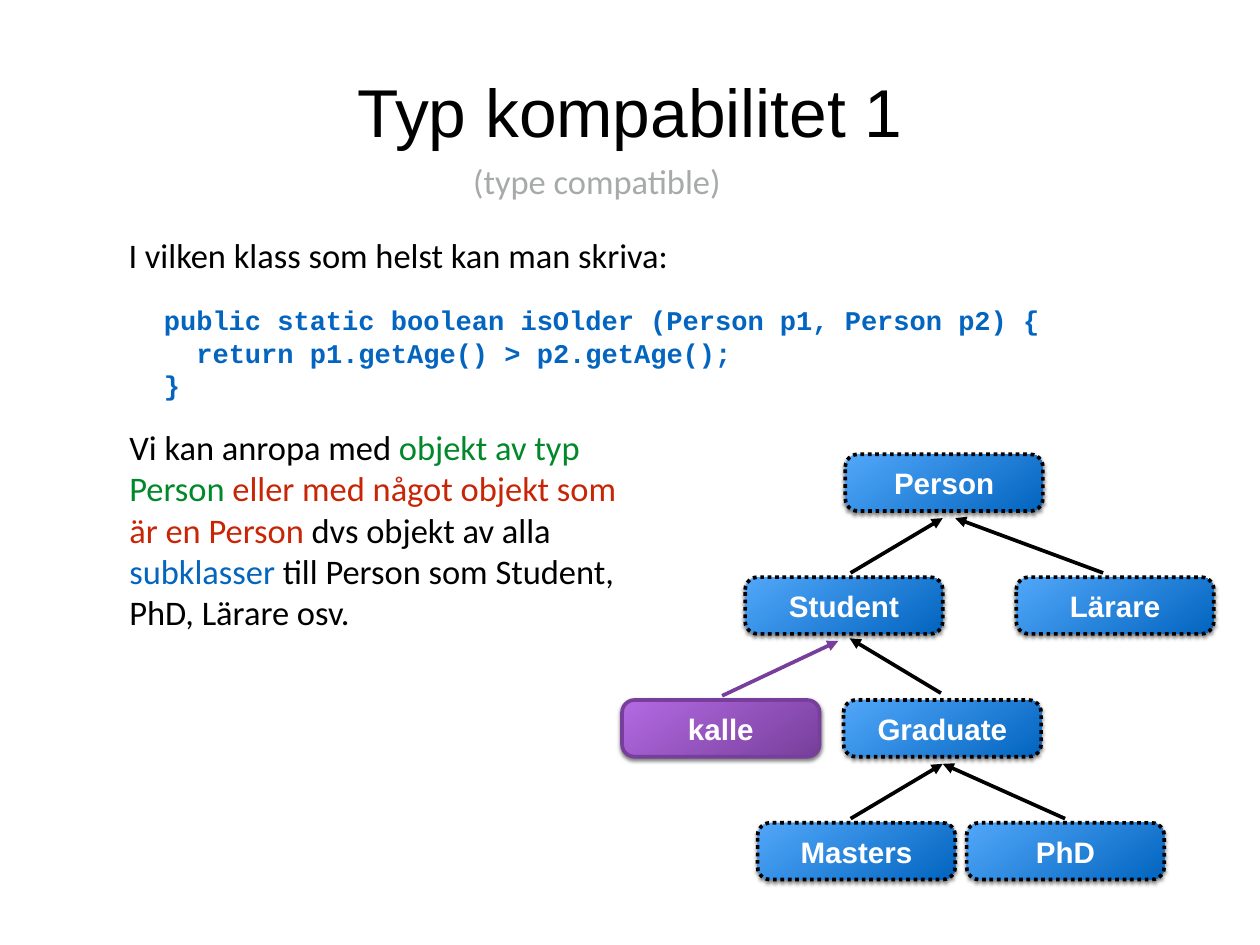
from lxml import etree
from pptx import Presentation
from pptx.dml.color import RGBColor
from pptx.enum.dml import MSO_LINE
from pptx.enum.shapes import MSO_CONNECTOR, MSO_SHAPE
from pptx.enum.text import MSO_ANCHOR, PP_ALIGN
from pptx.oxml.ns import qn
from pptx.util import Inches, Pt

ROUND, LINE = MSO_SHAPE.ROUNDED_RECTANGLE, MSO_CONNECTOR.STRAIGHT
DOTS, MIDDLE = MSO_LINE.ROUND_DOT, MSO_ANCHOR.MIDDLE
LEFT, CENTER = PP_ALIGN.LEFT, PP_ALIGN.CENTER

WIDE, HIGH = Inches(14.22), Inches(10.67)
BLACK, WHITE, GREY = "000000", "FFFFFF", "A6AAA9"
BLUE, SKY, GREEN, RED = "0365C0", "51A7F9", "00882B", "C82506"
PLUM, LILAC = "773F9B", "B36AE2"

TITLE = {"name": "Arial", "size": Pt(55)}
BODY = {"name": "Calibri", "size": Pt(28)}
CODE = {"name": "Courier New", "size": Pt(22), "bold": True}
LABEL = {"name": "Arial", "size": Pt(24), "bold": True}

BOX_W, BOX_H = 15.68, 6
TOP, STEP = 48.08, 13
NODES = [
    ("Person", 67.09, 0), ("Student", 59.14, 1), ("Lärare", 80.66, 1),
    ("Graduate", 66.95, 2), ("Masters", 60.13, 3), ("PhD", 76.72, 3),
]
LINKS = [
    (67.51, 74.82, 1, 0), (87.55, 75.81, 1, 0), (74.68, 67.44, 2, 0.28),
    (67.51, 74.82, 3, 0), (84.53, 74.82, 3, 0),
]


def rgb(code):
    """Return the colour for a hex string."""
    return RGBColor.from_string(code)


def place(*shares):
    """Turn alternating width and height percentages into lengths."""
    return [round((HIGH if i % 2 else WIDE) * s / 100) for i, s in enumerate(shares)]


def write(frame, paras, style, align=LEFT):
    """Fill a frame with paragraphs of (text, colour) runs."""
    frame.word_wrap = True
    for side in ("left", "right", "top", "bottom"):
        setattr(frame, f"margin_{side}", 0)
    for i, runs in enumerate(paras):
        para = frame.add_paragraph() if i else frame.paragraphs[0]
        para.alignment = align
        for text, color in runs:
            run = para.add_run()
            run.text = text
            run.font.color.rgb = rgb(color)
            for key, value in style.items():
                setattr(run.font, key, value)


def add_text(slide, area, paras, style, align=LEFT):
    """Add a text box and return its frame."""
    frame = slide.shapes.add_textbox(*place(*area)).text_frame
    write(frame, paras, style, align)
    return frame


def add_shade(shape):
    """Give a shape a soft shadow below it."""
    shape.shadow.inherit = False
    effects = shape.element.spPr.find(qn("a:effectLst"))
    shade = etree.SubElement(effects, qn("a:outerShdw"), blurRad=str(Pt(3)),
                             dist=str(Pt(2)), dir="5400000", rotWithShape="0")
    tint = etree.SubElement(shade, qn("a:srgbClr"), val=BLACK)
    etree.SubElement(tint, qn("a:alpha"), val="50000")


def add_node(slide, name, left, row, colors=(SKY, BLUE), edge=BLACK, dash=DOTS):
    """Add a named box on a row of the class tree."""
    area = place(left, TOP + row * STEP, BOX_W, BOX_H)
    box = slide.shapes.add_shape(ROUND, *area)
    box.adjustments[0] = 0.22
    box.fill.gradient()
    box.fill.gradient_angle = 305
    for stop, color in zip(box.fill.gradient_stops, colors):
        stop.color.rgb = rgb(color)
    box.line.color.rgb = rgb(edge)
    box.line.width = Pt(3)
    if dash:
        box.line.dash_style = dash
    add_shade(box)
    box.text_frame.vertical_anchor = MIDDLE
    write(box.text_frame, [[(name, WHITE)]], LABEL, CENTER)


def add_link(slide, start, end, row, lift=0, color=BLACK):
    """Add an arrow from a row of the tree up to the row above."""
    low = TOP + row * STEP - 0.45 - lift
    high = TOP + (row - 1) * STEP + BOX_H + 0.75 - lift
    link = slide.shapes.add_connector(LINE, *place(start, low, end, high))
    link.line.color.rgb = rgb(color)
    link.line.width = Pt(3)
    props = link.element.spPr
    etree.SubElement(props.find(qn("a:ln")), qn("a:tailEnd"), type="triangle")
    etree.SubElement(props, qn("a:effectLst"))


def add_words(slide):
    """Add the title, the code and the running text."""
    title = add_text(slide, (0.49, 0.66, 99.02, 22.12),
                     [[("Typ kompabilitet 1", BLACK)]], TITLE, CENTER)
    title.vertical_anchor = MIDDLE
    add_text(slide, (37.55, 16.96, 62, 5.25), [[("(type compatible)", GREY)]], BODY)
    add_text(slide, (10.2, 24.74, 69.9, 5.25),
             [[("I vilken klass som helst kan man skriva:", BLACK)]], BODY)
    lines = ["public static boolean isOlder (Person p1, Person p2) {",
             "return p1.getAge() > p2.getAge();", "}"]
    code = add_text(slide, (13.01, 32.15, 81.58, 14.06),
                    [[(line, BLUE)] for line in lines], CODE)
    code.paragraphs[1]._p.get_or_add_pPr().set("marL", str(Pt(26.4)))
    add_text(slide, (10.27, 45.08, 40.44, 22.4), [[
        ("Vi kan anropa med ", BLACK), ("objekt av typ Person ", GREEN),
        ("eller med något objekt som är en Person", RED),
        (" dvs objekt av alla ", BLACK), ("subklasser", BLUE),
        (" till Person som Student, PhD, Lärare osv.", BLACK),
    ]], BODY)


def main():
    """Build the slide and save it."""
    deck = Presentation()
    deck.slide_width, deck.slide_height = WIDE, HIGH
    slide = deck.slides.add_slide(deck.slide_layouts[6])
    add_words(slide)
    for node in NODES:
        add_node(slide, *node)
    for link in LINKS:
        add_link(slide, *link)
    add_node(slide, "kalle", 49.37, 2, (LILAC, PLUM), PLUM, None)
    add_link(slide, 57.31, 66.53, 2, color=PLUM)
    deck.save("out.pptx")


if __name__ == "__main__":
    main()
